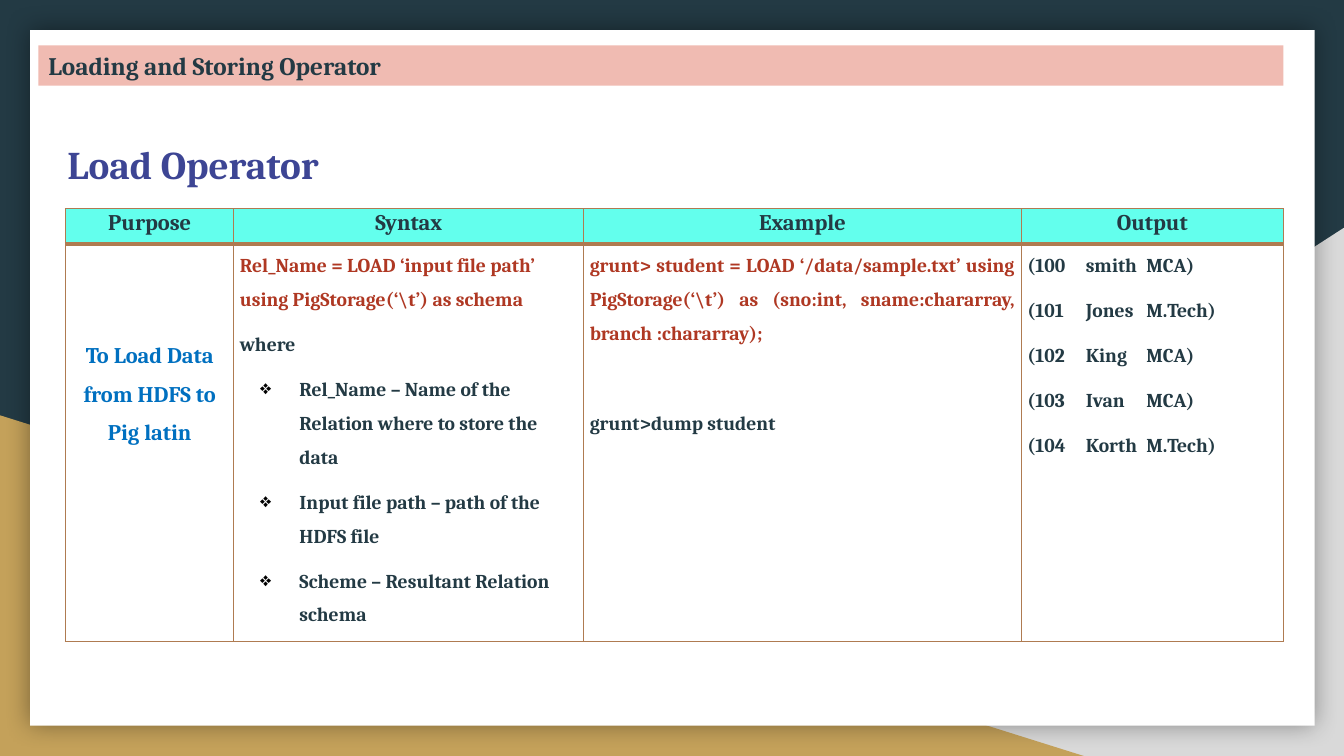
from lxml.etree import SubElement
from pptx import Presentation
from pptx.dml.color import RGBColor as RGB
from pptx.enum.shapes import MSO_SHAPE as SHAPE
from pptx.enum.text import MSO_ANCHOR as ANCHOR, MSO_AUTO_SIZE as FIT, PP_ALIGN as ALIGN
from pptx.oxml.ns import qn
from pptx.util import Inches, Pt

FONT = "Cambria"
DARK = RGB(0x23, 0x3A, 0x44)
GREY = RGB(0xD9, 0xD9, 0xD9)
GOLD = RGB(0xC4, 0xA1, 0x5A)
WHITE = RGB(0xFF, 0xFF, 0xFF)
BLACK = RGB(0, 0, 0)
PINK = RGB(0xF0, 0xBB, 0xB2)
BROWN = RGB(0xAF, 0x7B, 0x51)
AQUA = RGB(0x63, 0xFF, 0xED)
BLUE = RGB(0x00, 0x70, 0xC0)
RED = RGB(0xAF, 0x38, 0x23)
INDIGO = RGB(0x3D, 0x45, 0x94)

HEADS = ["Purpose", "Syntax", "Example", "Output"]
WIDTHS = [1.67, 3.47, 4.34, 2.6]
HEIGHTS = [0.35, 3.91]
TERMS = [
    "Rel_Name – Name of the Relation where to store the data",
    "Input file path – path of the HDFS file",
    "Scheme – Resultant Relation schema",
]
ROWS = [
    ("100", "smith", "MCA"),
    ("101", "Jones", "M.Tech"),
    ("102", "King", "MCA"),
    ("103", "Ivan", "MCA"),
    ("104", "Korth", "M.Tech"),
]


def add(parent, tag, **attrs):
    return SubElement(parent, qn(tag), attrs)


def tint(parent, color):
    """Add a solid colour to a line or effect."""
    return add(parent, "a:srgbClr", val=str(color))


def write(frame, text, size=14, color=DARK, align=ALIGN.LEFT, lead=1.5,
          after=8, bullet=None, tabs=()):
    """Fill the first paragraph of the frame, or append one."""
    para = frame.add_paragraph() if frame.text else frame.paragraphs[0]
    para.alignment = align
    para.line_spacing = lead
    para.space_before = Pt(0)
    para.space_after = Pt(after)
    run = para.add_run()
    run.text = text
    font = run.font
    font.name, font.size, font.bold = FONT, Pt(size), True
    font.color.rgb = color
    props = para._p.get_or_add_pPr()
    if bullet:
        props.set("marL", str(Inches(0.59)))
        props.set("indent", str(Inches(-0.39)))
        tint(add(props, "a:buClr"), BLACK)
        add(props, "a:buChar", char=bullet)
    if tabs:
        stops = add(props, "a:tabLst")
        for stop in tabs:
            add(stops, "a:tab", pos=str(Inches(stop)), algn="l")


def block(slide, kind, box, color, flip=False):
    shape = slide.shapes.add_shape(kind, *map(Inches, box))
    shape.shadow.inherit = False
    shape.fill.solid()
    shape.fill.fore_color.rgb = color
    shape.line.fill.background()
    if flip:
        shape.element.spPr.get_or_add_xfrm().set("flipH", "1")
    return shape


def backdrop(slide, box):
    """Draw the corner triangles and the white sheet; return the sheet."""
    x, y, w, h = box
    fill = slide.background.fill
    fill.solid()
    fill.fore_color.rgb = DARK
    block(slide, SHAPE.RIGHT_TRIANGLE, (x + w - 8.11, y + h - 5.24, 8.11, 5.24),
          GREY, flip=True)
    block(slide, SHAPE.RIGHT_TRIANGLE, (x, y + h - 3.38, 10.75, 3.38), GOLD)
    sheet = block(slide, SHAPE.RECTANGLE, (x + 0.3, y + 0.3, w - 0.59, h - 0.6), WHITE)
    glow = add(sheet.element.spPr.find(qn("a:effectLst")), "a:outerShdw",
               blurRad=str(Pt(18)), dist="0", dir="0", algn="ctr", rotWithShape="0")
    add(tint(glow, BLACK), "a:alpha", val="40000")
    return sheet


def banner(slide, box, sheet):
    title = slide.shapes.title
    sheet.element.addnext(title.element)
    title.left, title.top, title.width, title.height = map(Inches, box)
    title.fill.solid()
    title.fill.fore_color.rgb = PINK
    frame = title.text_frame
    frame.auto_size = FIT.NONE
    frame.vertical_anchor = ANCHOR.MIDDLE
    write(frame, "Loading and Storing Operator", size=18, lead=1, after=0)


def heading(slide, box):
    frame = slide.shapes.add_textbox(*map(Inches, box)).text_frame
    frame.word_wrap = False
    write(frame, "Load Operator", size=28, color=INDIGO, align=ALIGN.CENTER,
          lead=1, after=0)


def style(cell, color, top, bottom):
    """Set the fill, margins and border widths of a cell."""
    cell.margin_left = cell.margin_right = Inches(0.06)
    cell.margin_top = cell.margin_bottom = 0
    props = cell._tc.get_or_add_tcPr()
    for side, width in zip("LRTB", (1, 1, top, bottom)):
        line = add(props, f"a:ln{side}", w=str(Pt(width)))
        tint(add(line, "a:solidFill"), BROWN)
    cell.fill.solid()
    cell.fill.fore_color.rgb = color


def grid(slide, box):
    shape = slide.shapes.add_table(len(HEIGHTS), len(WIDTHS), *map(Inches, box))
    table = shape.table
    for row, height in zip(table.rows, HEIGHTS):
        row.height = Inches(height)
    for col, (head, width) in enumerate(zip(HEADS, WIDTHS)):
        table.columns[col].width = Inches(width)
        style(table.cell(0, col), AQUA, 1, 3)
        style(table.cell(1, col), WHITE, 3, 1)
        write(table.cell(0, col).text_frame, head, size=16, align=ALIGN.CENTER, lead=1.07)

    purpose, syntax, example, output = table.rows[1].cells
    purpose.margin_top = Inches(0.86)
    write(purpose.text_frame, "To Load Data from HDFS to Pig latin", size=16,
          color=BLUE, align=ALIGN.CENTER)

    frame = syntax.text_frame
    write(frame, "Rel_Name = LOAD ‘input file path’ using PigStorage(‘\\t’) as schema",
          color=RED)
    write(frame, "where")
    for term in TERMS:
        write(frame, term, bullet="❖")

    frame = example.text_frame
    write(frame, "grunt> student = LOAD ‘/data/sample.txt’ using PigStorage(‘\\t’) as "
          "(sno:int, sname:chararray, branch :chararray);",
          color=RED, align=ALIGN.JUSTIFY, after=40)
    write(frame, "grunt>dump student", align=ALIGN.JUSTIFY)

    for code, name, course in ROWS:
        write(output.text_frame, f"({code}\t{name}\t{course})", tabs=(0.58, 1.18))


def main():
    deck = Presentation()
    deck.slide_width, deck.slide_height = Inches(13.33), Inches(7.5)
    slide = deck.slides.add_slide(deck.slide_layouts[5])
    sheet = backdrop(slide, (0, 0, 13.33, 7.5))
    banner(slide, (0.38, 0.45, 12.35, 0.4), sheet)
    heading(slide, (0.46, 1.34, 2.91, 0.57))
    grid(slide, (0.65, 2.07, sum(WIDTHS), sum(HEIGHTS)))
    deck.save("out.pptx")


if __name__ == "__main__":
    main()
